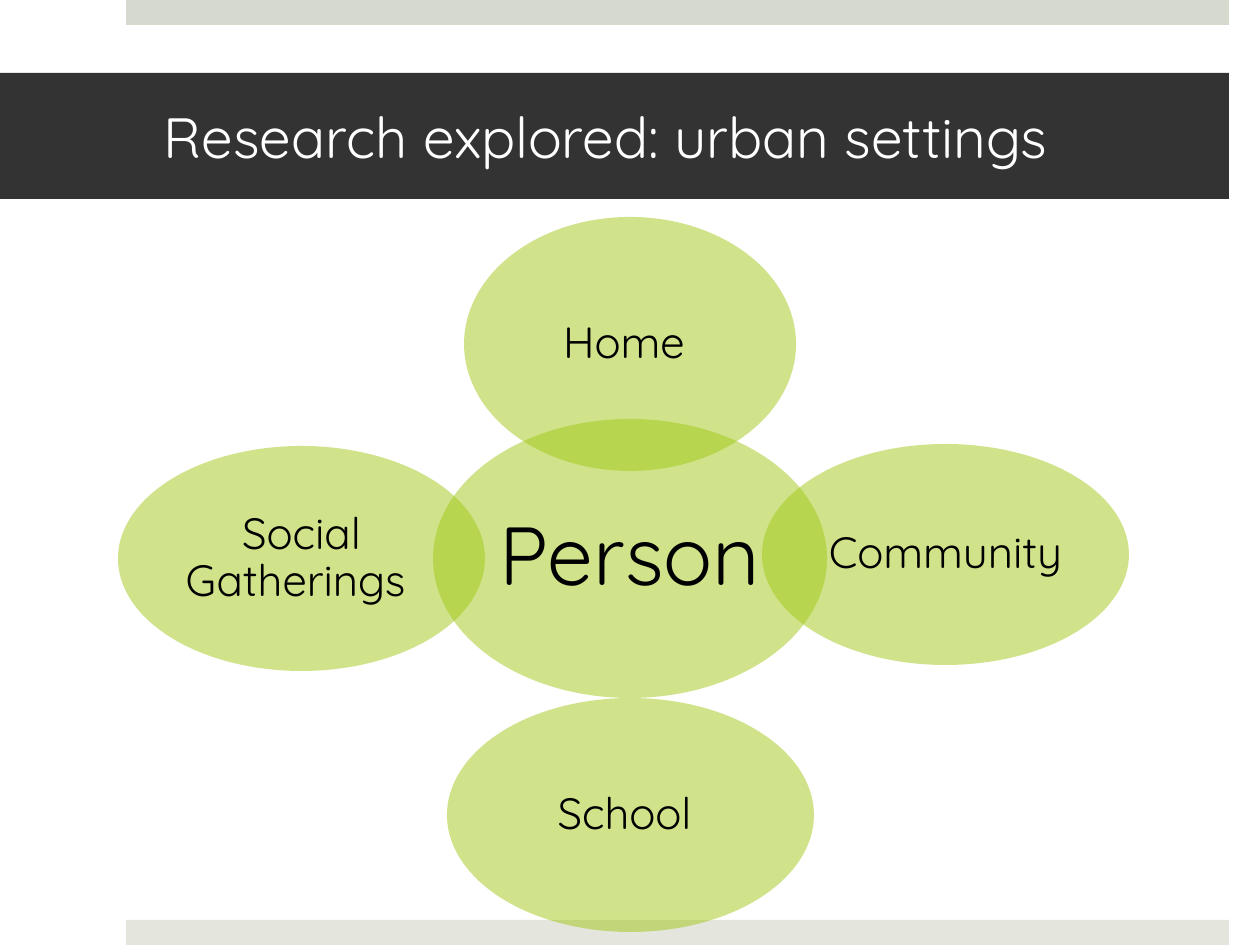
from math import sqrt

from lxml.etree import SubElement
from pptx import Presentation
from pptx.dml.color import RGBColor
from pptx.enum.shapes import MSO_SHAPE
from pptx.enum.text import MSO_ANCHOR, PP_ALIGN
from pptx.oxml.ns import qn
from pptx.util import Emu, Pt

PX_PER_INCH = 126
FONT = "Quicksand"
COLORS = {
    "top_bar": "D6D9CD",
    "bottom_bar": "E4E6DE",
    "banner": "333333",
    "circle": "A2C816",
    "title": "FFFFFF",
    "label": "000000",
}
CIRCLES = [
    ("Person", (433, 419, 394, 279), 47, 9),
    ("Home ", (464, 217, 332, 254), 25, 4),
    ("Community", (762, 444, 367, 221), 25, 4),
    ("School ", (447, 698, 367, 234), 25, 4),
    ("Social Gatherings ", (118, 446, 367, 225), 25, 4),
]


def px(length):
    """Turn pixels into EMU."""
    return Emu(round(length * 914400 / PX_PER_INCH))


def add_filled(page, kind, box, color):
    """Add a borderless preset shape in one colour."""
    shape = page.shapes.add_shape(kind, *map(px, box))
    shape.shadow.inherit = False
    shape.fill.solid()
    shape.fill.fore_color.rgb = RGBColor.from_string(COLORS[color])
    shape.line.fill.background()
    return shape


def write_text(shape, text, size, color, align, insets):
    """Write one vertically centred run into a shape."""
    frame = shape.text_frame
    frame.word_wrap = True
    frame.vertical_anchor = MSO_ANCHOR.MIDDLE
    frame.margin_left, frame.margin_top, frame.margin_right, frame.margin_bottom = map(px, insets)
    para = frame.paragraphs[0]
    para.alignment = align
    span = para.add_run()
    span.text = text
    span.font.name = FONT
    span.font.size = Pt(size)
    span.font.color.rgb = RGBColor.from_string(COLORS[color])
    return para


def add_bars(page, box):
    """Add the pale bars along the top and bottom of a box."""
    left, top, width, height = box
    thickness = 25
    add_filled(page, MSO_SHAPE.RECTANGLE, (left, top, width, thickness), "top_bar")
    bottom = top + height - thickness
    add_filled(page, MSO_SHAPE.RECTANGLE, (left, bottom, width, thickness), "bottom_bar")


def add_banner(page, box, text):
    """Add the dark title banner."""
    banner = add_filled(page, MSO_SHAPE.RECTANGLE, box, "banner")
    write_text(banner, text, 32.4, "title", PP_ALIGN.LEFT, (164, 6, 38, 6))


def add_circle(page, box, text, size, inset):
    """Add a translucent ellipse with a label in its inscribed rectangle."""
    ellipse = add_filled(page, MSO_SHAPE.OVAL, box, "circle")
    color = ellipse.fill._xPr.find(qn("a:solidFill"))[0]
    SubElement(color, qn("a:alpha"), val="50000")
    left, top, width, height = box
    inner_width, inner_height = round(width / sqrt(2)), round(height / sqrt(2))
    label = page.shapes.add_textbox(
        px(left + (width - inner_width) / 2),
        px(top + (height - inner_height) / 2),
        px(inner_width),
        px(inner_height),
    )
    para = write_text(label, text, size, "label", PP_ALIGN.CENTER, [inset] * 4)
    para.line_spacing = 0.9


def main():
    """Build and save the slide."""
    deck = Presentation()
    deck.slide_width, deck.slide_height = px(1260), px(945)
    page = deck.slides.add_slide(deck.slide_layouts[6])
    add_bars(page, (126, 0, 1103, 945))
    add_banner(page, (0, 73, 1229, 126), "Research explored: urban settings")
    for text, box, size, inset in CIRCLES:
        add_circle(page, box, text, size, inset)
    deck.save("out.pptx")


if __name__ == "__main__":
    main()
